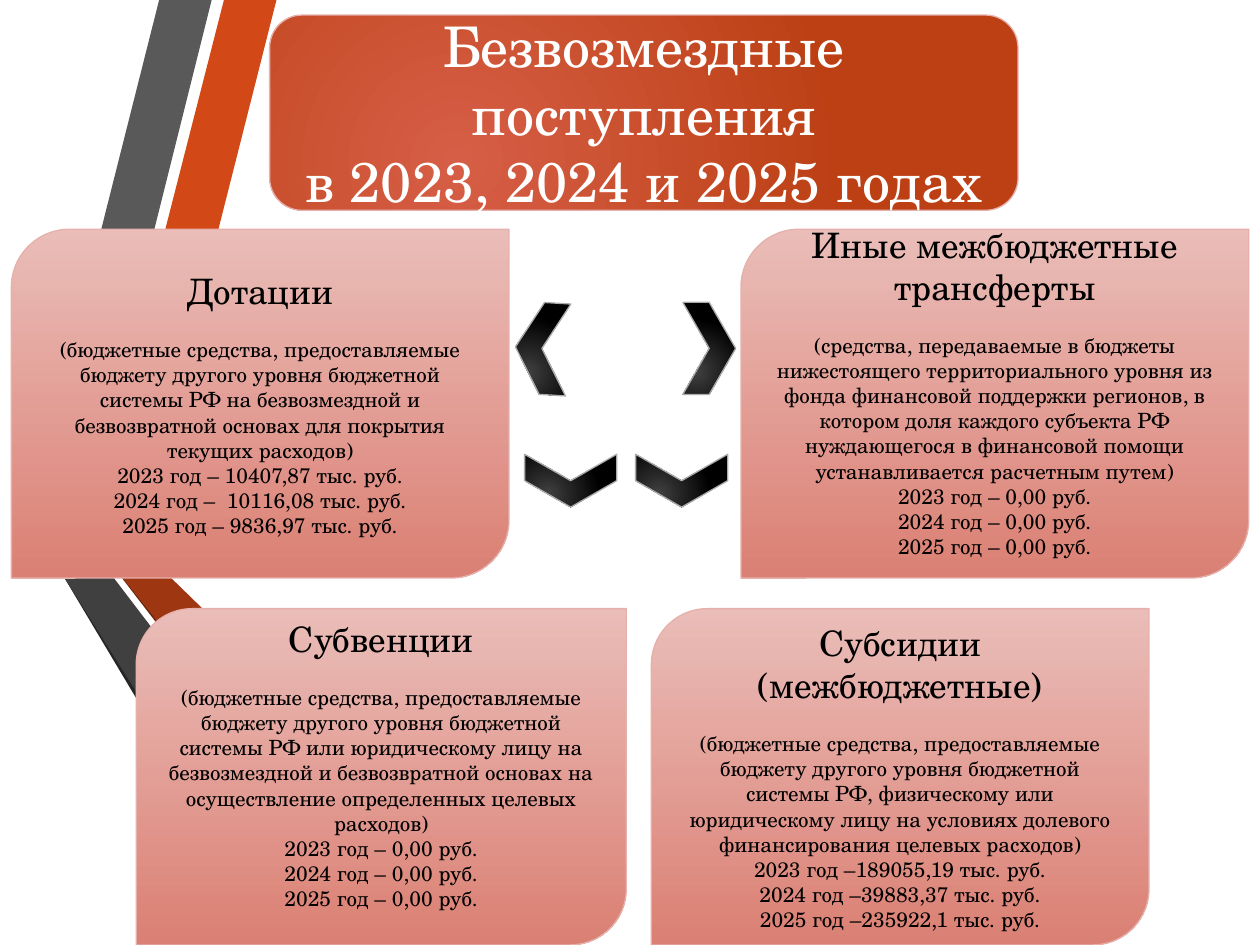
from lxml import etree
from pptx import Presentation
from pptx.dml.color import RGBColor
from pptx.enum.shapes import MSO_SHAPE
from pptx.enum.text import MSO_ANCHOR, MSO_AUTO_SIZE, PP_ALIGN
from pptx.oxml.ns import qn
from pptx.util import Pt

ROUND, PANEL, CHEVRON = (MSO_SHAPE.ROUNDED_RECTANGLE,
                         MSO_SHAPE.ROUND_2_DIAG_RECTANGLE, MSO_SHAPE.CHEVRON)
MIDDLE, CENTER, NO_FIT = MSO_ANCHOR.MIDDLE, PP_ALIGN.CENTER, MSO_AUTO_SIZE.NONE
FONT = "TeX Gyre Schola"
BLACK, WHITE = RGBColor(0, 0, 0), RGBColor(255, 255, 255)
TITLE_FILL = RGBColor(0xD6, 0x5E, 0x46), RGBColor(0xBC, 0x40, 0x14)
PANEL_FILL = RGBColor(0xEA, 0xBD, 0xB8), RGBColor(0xDB, 0x80, 0x74)
ARROW_FILL = RGBColor(0x40, 0x40, 0x40), BLACK
PINK_LINE, GREY_LINE = RGBColor(0xE6, 0xB1, 0xAC), RGBColor(0xAB, 0xAB, 0xAB)
ORANGE, GREY = RGBColor(0xD3, 0x48, 0x17), RGBColor(0x59, 0x59, 0x59)
RUST, CHARCOAL = RGBColor(0x9E, 0x36, 0x11), RGBColor(0x40, 0x40, 0x40)
DARK_RUST, DARK_GREY = RGBColor(0x69, 0x24, 0x0C), RGBColor(0x26, 0x26, 0x26)
LINE_GAP = 14.4

RIBBONS = [
    (ORANGE, [(50.4, 305.3), (79.2, 312.5), (157.7, 0), (128.2, 0)]),
    (GREY, [(121, 0), (91.4, 0), (15.8, 297.4), (44.6, 303.8)]),
    (DARK_GREY, [(16.6, 297.4), (162, 540), (169.2, 540)]),
    (DARK_RUST, [(237.6, 540), (51.1, 306), (231.1, 540)]),
    (RUST, [(50.4, 305.3), (237.6, 540), (313.2, 540), (79.2, 312.5)]),
    (CHARCOAL, [(225.4, 540), (44.6, 303.8), (15.8, 297.4), (169.2, 540)]),
]
TITLE = ["Безвозмездные поступления", "в 2023, 2024 и 2025 годах"]
GRANTS = [
    ((6.5, 131, 284.4, 199.4), 0, "Дотации",
     ["(бюджетные средства, предоставляемые бюджету другого уровня бюджетной системы РФ "
      "на безвозмездной и безвозвратной основах для покрытия текущих расходов)",
      "2023 год – 10407,87 тыс. руб.", "2024 год –  10116,08 тыс. руб.",
      "2025 год – 9836,97 тыс. руб."]),
    ((77.8, 347.8, 280.1, 192.2), LINE_GAP, "Субвенции",
     ["(бюджетные средства, предоставляемые бюджету другого уровня бюджетной системы РФ "
      "или юридическому лицу на безвозмездной и безвозвратной основах на осуществление "
      "определенных целевых расходов)",
      "2023 год – 0,00 руб.", "2024 год – 0,00 руб.", "2025 год – 0,00 руб."]),
    ((372.2, 347.8, 284.4, 192.2), 0, "Субсидии (межбюджетные)",
     ["(бюджетные средства, предоставляемые бюджету другого уровня бюджетной системы РФ, "
      "физическому или юридическому лицу на условиях долевого финансирования целевых расходов)",
      "2023 год –189055,19 тыс. руб.", "2024 год –39883,37 тыс. руб.",
      "2025 год –235922,1 тыс. руб."]),
    ((423.4, 131, 290.2, 199.4), LINE_GAP, "Иные межбюджетные трансферты",
     ["(средства, передаваемые в бюджеты нижестоящего территориального уровня из фонда "
      "финансовой поддержки регионов, в котором доля каждого субъекта РФ нуждающегося "
      "в финансовой помощи устанавливается расчетным путем)",
      "2023 год – 0,00 руб.", "2024 год – 0,00 руб.", "2025 год – 0,00 руб."]),
]
ARROWS = [(390.2, 172.8, 0), (374.4, 248.4, 90), (311, 248.4, 90), (294.5, 172.8, 183.4)]


def set_gradient(sp, colors, radial):
    """Fill a shape with a two-colour gradient, radial or top to bottom."""
    sp.fill.gradient()
    grad = sp._element.spPr.find(qn("a:gradFill"))
    for child in list(grad):
        grad.remove(child)
    stops = etree.SubElement(grad, qn("a:gsLst"))
    for pos, color in zip(("0", "100000"), colors):
        stop = etree.SubElement(stops, qn("a:gs"), pos=pos)
        etree.SubElement(stop, qn("a:srgbClr"), val=str(color))
    if radial:
        circle = etree.SubElement(grad, qn("a:path"), {"path": "circle"})
        etree.SubElement(circle, qn("a:fillToRect"),
                         l="50000", t="100000", r="100000", b="50000")
    else:
        etree.SubElement(grad, qn("a:lin"), ang="5400000", scaled="0")


def add_filled(s, kind, box, colors, line, radial=True):
    """Add an outlined preset shape with a gradient fill."""
    sp = s.shapes.add_shape(kind, *map(Pt, box))
    sp.shadow.inherit = False
    set_gradient(sp, colors, radial)
    sp.line.color.rgb = line
    sp.line.width = Pt(0.75)
    return sp


def add_line(p, text, size, color):
    """Write one centred paragraph."""
    p.alignment = CENTER
    r = p.add_run()
    r.text = text
    r.font.name, r.font.size, r.font.color.rgb = FONT, Pt(size), color


def add_ribbons(s, left, top):
    """Draw the folded ribbons from the given corner."""
    for color, points in RIBBONS:
        start, *rest = [(left + x, top + y) for x, y in points]
        builder = s.shapes.build_freeform(*start, scale=Pt(1))
        builder.add_line_segments(rest, close=True)
        sp = builder.convert_to_shape()
        sp.shadow.inherit = False
        sp.fill.solid()
        sp.fill.fore_color.rgb = color
        sp.line.fill.background()


def add_title(s, box):
    """Place the title over its rounded panel."""
    add_filled(s, ROUND, box, TITLE_FILL, PINK_LINE)
    sp = s.shapes.title
    sp.left, sp.top, sp.width, sp.height = map(Pt, box)
    s.shapes._spTree.append(sp._element)
    tf = sp.text_frame
    tf.auto_size, tf.vertical_anchor, tf.word_wrap = NO_FIT, MIDDLE, True
    for i, text in enumerate(TITLE):
        add_line(tf.add_paragraph() if i else tf.paragraphs[0], text, 32, WHITE)


def add_grant(s, box, lift, heading, lines):
    """Place one panel with a heading, a definition and yearly sums."""
    sp = add_filled(s, PANEL, box, PANEL_FILL, PINK_LINE, radial=False)
    tf = sp.text_frame
    tf.word_wrap, tf.vertical_anchor = True, MIDDLE
    tf.margin_bottom = Pt(3.6 + lift)
    p = tf.paragraphs[0]
    p.space_after = Pt(LINE_GAP)
    add_line(p, heading, 20, BLACK)
    for text in lines:
        add_line(tf.add_paragraph(), text, 12, BLACK)


def add_arrow(s, box, rotation):
    """Place one chevron turned by the given angle."""
    sp = add_filled(s, CHEVRON, box, ARROW_FILL, GREY_LINE)
    sp.rotation = rotation


def main():
    """Build and save the slide."""
    prs = Presentation()
    prs.slide_width, prs.slide_height = Pt(720), Pt(540)
    s = prs.slides.add_slide(prs.slide_layouts[5])
    add_ribbons(s, 0, 0)
    add_title(s, (154.1, 8.6, 427.7, 111.6))
    for grant in GRANTS:
        add_grant(s, *grant)
    for left, top, rotation in ARROWS:
        add_arrow(s, (left, top, 30.2, 52.6), rotation)
    prs.save("out.pptx")


if __name__ == "__main__":
    main()
